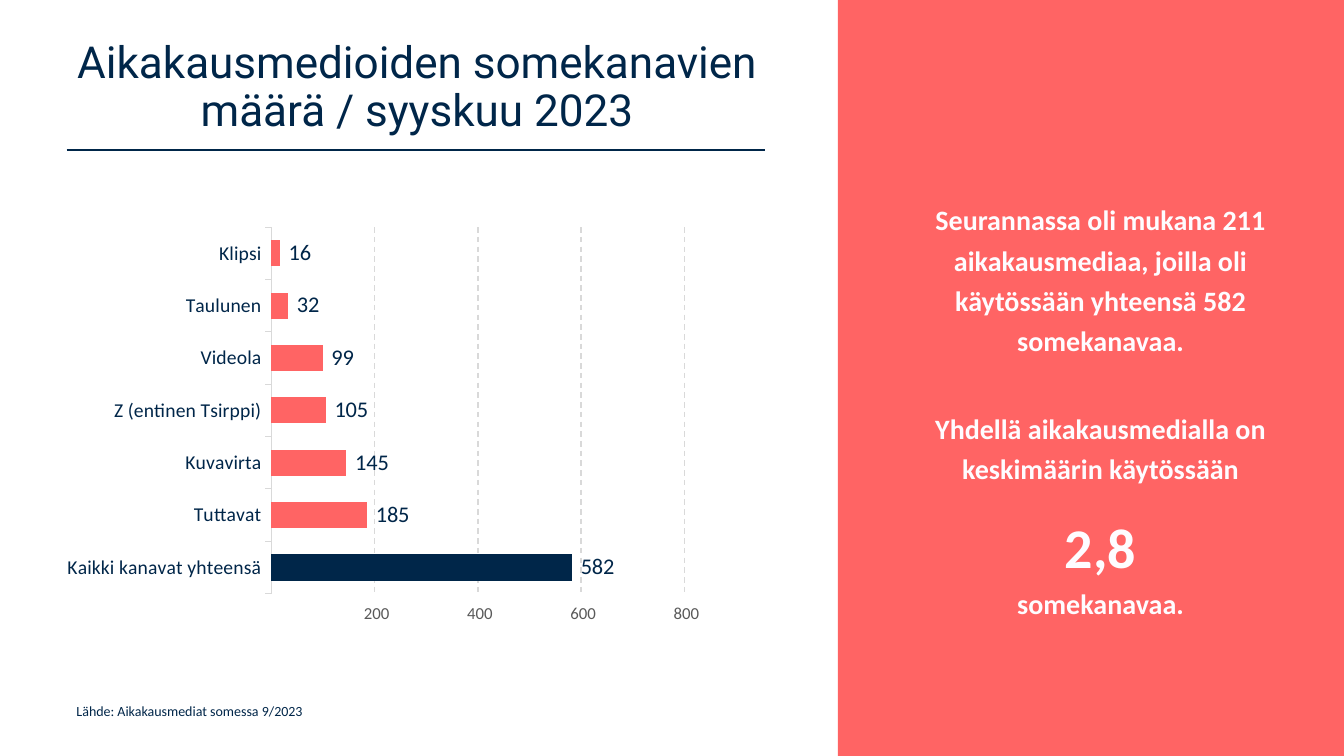
from dataclasses import dataclass

from lxml.etree import SubElement
from pptx import Presentation
from pptx.chart.data import CategoryChartData
from pptx.dml.color import RGBColor
from pptx.enum.chart import XL_CHART_TYPE as ChartType, XL_LABEL_POSITION as LabelPos, XL_TICK_MARK as Tick
from pptx.enum.dml import MSO_LINE_DASH_STYLE as Dash
from pptx.enum.shapes import MSO_CONNECTOR as Connector, MSO_SHAPE as Preset
from pptx.enum.text import MSO_ANCHOR as Anchor, PP_ALIGN as Align
from pptx.oxml.ns import qn
from pptx.util import Inches, Pt


@dataclass(frozen=True)
class Theme:
    """Colours, fonts and type sizes of the slide."""
    coral: RGBColor = RGBColor.from_string("FF6464")
    navy: RGBColor = RGBColor.from_string("002649")
    pale: RGBColor = RGBColor.from_string("FEFCFF")
    grid: RGBColor = RGBColor.from_string("D9D9D9")
    grey: RGBColor = RGBColor.from_string("595959")
    heading_font: str = "Roboto"
    body_font: str = "Calibri"
    heading: float = 31.5
    figure: float = 40
    message: float = 20
    value: float = 16
    category: float = 14
    scale: float = 12
    source: float = 10


def apply(target, values):
    """Set each named attribute of the target."""
    for name, value in values.items():
        setattr(target, name, value)


class SlideBuilder:
    """Draws themed elements on one slide."""

    def __init__(self, slide, theme):
        """Keep the slide and its theme."""
        self.slide, self.theme = slide, theme

    def style_font(self, font, size, color, name=None, bold=False):
        """Give a font its size, colour, face and weight."""
        apply(font, {"size": Pt(size), "name": name or self.theme.body_font, "bold": bold})
        font.color.rgb = color

    def style_line(self, line, color, width, dash=Dash.SOLID):
        """Give a line its colour, width and dash."""
        line.color.rgb = color
        apply(line, {"width": Pt(width), "dash_style": dash})

    def panel(self, left, top, width, height, color):
        """Draw a plain filled rectangle."""
        panel = self.slide.shapes.add_shape(
            Preset.RECTANGLE, *map(Inches, (left, top, width, height)))
        panel.shadow.inherit = False
        panel.fill.solid()
        panel.fill.fore_color.rgb = color
        panel.line.fill.background()

    def rule(self, left, right, y, color):
        """Draw a thin horizontal line."""
        rule = self.slide.shapes.add_connector(
            Connector.STRAIGHT, *map(Inches, (left, y, right, y)))
        self.style_line(rule.line, color, 1)
        SubElement(rule._element.spPr, qn("a:effectLst"))

    def text(self, box, lines, color, anchor=Anchor.MIDDLE, name=None, bold=False, **layout):
        """Write lines given as text, size and space before."""
        frame = self.slide.shapes.add_textbox(*map(Inches, box)).text_frame
        apply(frame, {"word_wrap": True, "vertical_anchor": anchor})
        for index, (wording, size, before) in enumerate(lines):
            paragraph = frame.add_paragraph() if index else frame.paragraphs[0]
            apply(paragraph, {"space_before": Pt(before), **layout})
            run = paragraph.add_run()
            run.text = wording
            self.style_font(run.font, size, color, name, bold)

    def place_plot(self, chart, **place):
        """Fix the inner plot area as fractions of the chart."""
        plot_area = chart._chartSpace.chart.plotArea
        for former in plot_area.findall(qn("c:layout")):
            plot_area.remove(former)
        layout = SubElement(plot_area, qn("c:layout"))
        plot_area.insert(0, layout)
        manual = SubElement(layout, qn("c:manualLayout"))
        settings = {"layoutTarget": "inner", "xMode": "edge", "yMode": "edge", **place}
        for tag, value in settings.items():
            SubElement(manual, qn(f"c:{tag}")).set("val", str(value))

    def bar_chart(self, box, counts, number_format):
        """Draw channel counts as bars with the total highlighted."""
        theme = self.theme
        data = CategoryChartData()
        data.categories = list(counts)
        data.add_series("Somekanavat", list(counts.values()))
        chart = self.slide.shapes.add_chart(
            ChartType.BAR_CLUSTERED, *map(Inches, box), data).chart
        apply(chart, {"has_legend": False, "has_title": False})
        self.style_font(chart.font, theme.source, theme.navy)
        self.place_plot(chart, x=0.324, y=0.086, w=0.493, h=0.838)

        channels, scale = chart.category_axis, chart.value_axis
        apply(channels, {"major_tick_mark": Tick.OUTSIDE, "has_major_gridlines": False})
        self.style_font(channels.tick_labels.font, theme.category, theme.navy)
        self.style_line(channels.format.line, theme.grid, 0.75)

        apply(scale, {"minimum_scale": 0, "maximum_scale": 800, "major_unit": 200,
                      "major_tick_mark": Tick.OUTSIDE, "has_major_gridlines": True})
        self.style_font(scale.tick_labels.font, theme.scale, theme.grey)
        scale.format.line.fill.background()
        self.style_line(scale.major_gridlines.format.line, theme.grid, 1, Dash.DASH)

        plot = chart.plots[0]
        apply(plot, {"gap_width": 100, "vary_by_categories": False, "has_data_labels": True})
        apply(plot.data_labels, {"show_value": True, "position": LabelPos.OUTSIDE_END})
        self.style_font(plot.data_labels.font, theme.value, theme.navy)
        for labels in (scale.tick_labels, plot.data_labels):
            apply(labels, {"number_format": number_format, "number_format_is_linked": False})

        bars = plot.series[0]
        for part, color in ((bars, theme.coral), (bars.points[0], theme.navy)):
            part.format.fill.solid()
            part.format.fill.fore_color.rgb = color


def main():
    """Build and save the slide."""
    theme = Theme()
    deck = Presentation()
    apply(deck, {"slide_width": Inches(13.33), "slide_height": Inches(7.5)})
    builder = SlideBuilder(deck.slides.add_slide(deck.slide_layouts[6]), theme)

    builder.panel(8.31, 0, 5.02, 7.5, theme.coral)
    builder.rule(0.66, 7.59, 1.49, theme.navy)
    builder.text((0.66, 6.92, 6.58, 0.44),
                 [("Lähde: Aikakausmediat somessa 9/2023", theme.source, 0)],
                 theme.navy, Anchor.TOP)
    builder.text((0.66, 0.25, 6.95, 1.25),
                 [("Aikakausmedioiden somekanavien määrä / syyskuu 2023", theme.heading, 0)],
                 theme.navy, name=theme.heading_font, alignment=Align.CENTER, line_spacing=0.9)

    message = [
        ("Seurannassa oli mukana 211 aikakausmediaa, joilla oli "
         "käytössään yhteensä 582 somekanavaa.", theme.message, 0),
        ("Yhdellä aikakausmedialla on keskimäärin käytössään", theme.message, 34),
        ("2,8", theme.figure, 10),
        ("somekanavaa.", theme.message, 0),
    ]
    builder.text((9.04, 1.5, 3.75, 5.1), message, theme.pale, bold=True,
                 alignment=Align.CENTER, line_spacing=1.2)

    counts = {
        "Kaikki kanavat yhteensä": 582,
        "Tuttavat": 185,
        "Kuvavirta": 145,
        "Z (entinen Tsirppi)": 105,
        "Videola": 99,
        "Taulunen": 32,
        "Klipsi": 16,
    }
    builder.bar_chart((0, 1.88, 8.31, 4.34), counts, r"#\ ##0;\-#\ ##0;;@")
    deck.save("out.pptx")


if __name__ == "__main__":
    main()
